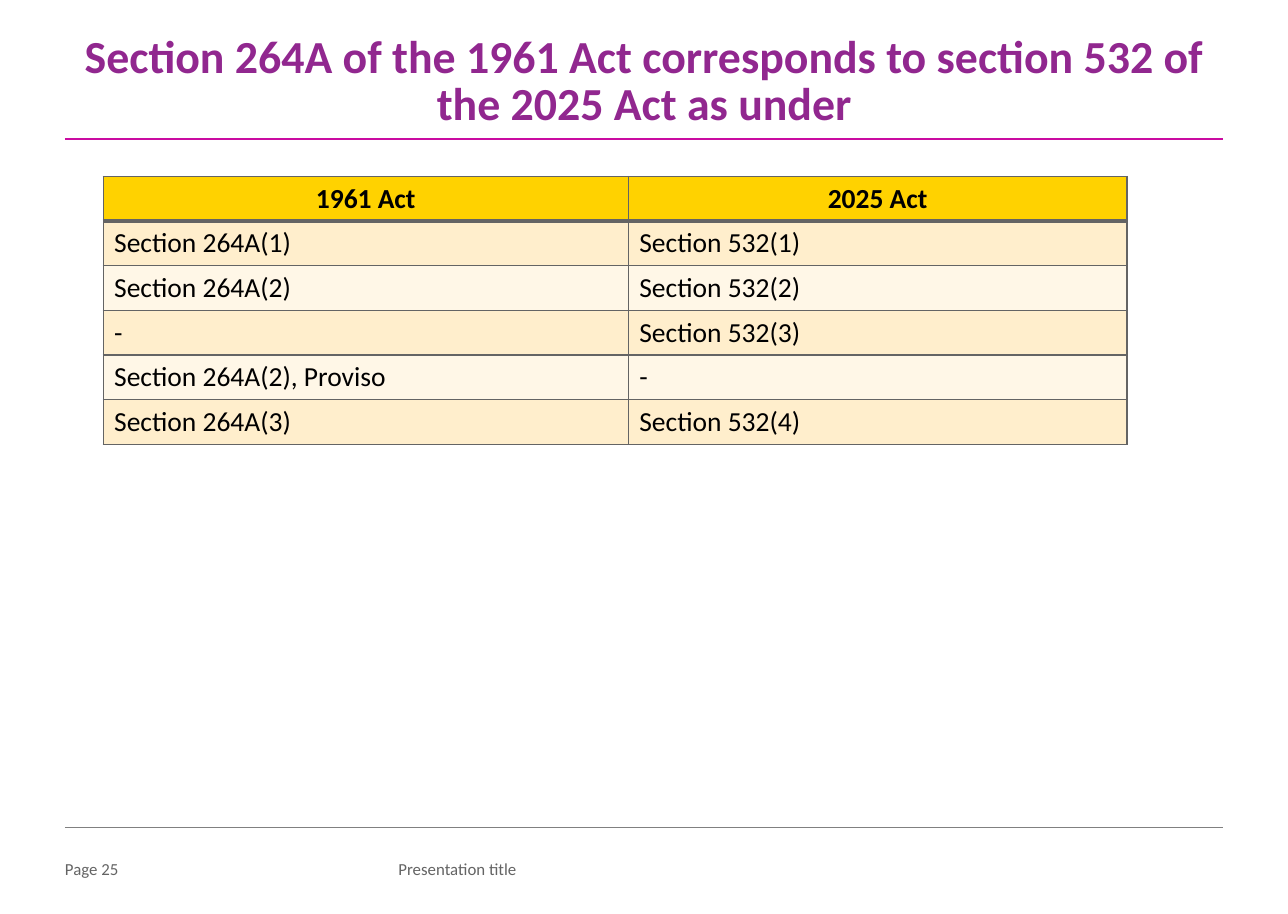
"""Build the slide that maps section 264A of the 1961 Act to section 532 of the 2025 Act."""
from lxml.etree import SubElement
from pptx import Presentation
from pptx.dml.color import RGBColor
from pptx.enum.shapes import MSO_CONNECTOR as Link
from pptx.enum.text import MSO_ANCHOR as Anchor, MSO_AUTO_SIZE as Fit, PP_ALIGN as Align
from pptx.oxml.ns import qn
from pptx.util import Pt

PURPLE = RGBColor(0x91, 0x27, 0x8F)
PINK = RGBColor(0xCA, 0x0C, 0xA1)
SILVER = RGBColor(0x80, 0x80, 0x80)
GRAY = RGBColor(0x64, 0x64, 0x64)
BLACK = RGBColor(0, 0, 0)
GOLD = RGBColor(0xFF, 0xD2, 0x00)
SAND = RGBColor(0xFF, 0xEE, 0xCC)
CREAM = RGBColor(0xFF, 0xF7, 0xE7)


def style(para, size, color, bold=False):
    for run in para.runs:
        font = run.font
        font.name, font.size, font.bold = "Calibri", Pt(size), bold
        font.color.rgb = color


def strip(frame):
    frame.margin_left = frame.margin_right = Pt(0)
    frame.margin_top = frame.margin_bottom = Pt(0)
    frame.auto_size = Fit.NONE
    frame.word_wrap = True
    frame.vertical_anchor = Anchor.TOP


deck = Presentation()
deck.slide_width, deck.slide_height = Pt(842.4), Pt(597.6)
slide = deck.slides.add_slide(deck.slide_layouts[5])
shapes = slide.shapes

for y, color, width in [(90.7, PINK, 1.5), (540.7, SILVER, 0.25)]:
    rule = shapes.add_connector(Link.STRAIGHT, Pt(42.5), Pt(y), Pt(800), Pt(y))
    rule.line.color.rgb, rule.line.width = color, Pt(width)
    SubElement(rule._element.spPr, qn("a:effectLst"))

title = shapes.title
title.left, title.top, title.width, title.height = Pt(42.5), Pt(23.8), Pt(758), Pt(60.5)
frame = title.text_frame
frame.text = "Section 264A of the 1961 Act corresponds to section 532 of the 2025 Act as under"
strip(frame)
para = frame.paragraphs[0]
para.alignment, para.line_spacing = Align.CENTER, 0.85
style(para, 30, PURPLE, True)

rows = [
    ("1961 Act", "2025 Act"),
    ("Section 264A(1)", "Section 532(1)"),
    ("Section 264A(2)", "Section 532(2)"),
    ("-", "Section 532(3)"),
    ("Section 264A(2), Proviso", "-"),
    ("Section 264A(3)", "Section 532(4)"),
]
high = 29.1
table = shapes.add_table(len(rows), 2, Pt(67.5), Pt(115.4), Pt(669.6), Pt(high * len(rows))).table
for col, width in zip(table.columns, (343.5, 326.1)):
    col.width = Pt(width)
for r, texts in enumerate(rows):
    table.rows[r].height = Pt(high)
    for c, text in enumerate(texts):
        cell = table.cell(r, c)
        cell.text = text
        para = cell.text_frame.paragraphs[0]
        para.alignment = Align.LEFT if r else Align.CENTER
        style(para, 18, BLACK, r == 0)
        props = cell._tc.get_or_add_tcPr()
        thick = {0: "lnB", 1: "lnT"}.get(r)
        for side in ("lnL", "lnR", "lnT", "lnB"):
            edge = SubElement(props, qn("a:" + side), w=str(Pt(3 if side == thick else 1)))
            fill = SubElement(edge, qn("a:solidFill"))
            SubElement(fill, qn("a:srgbClr"), val=str(GRAY))
        cell.fill.solid()
        cell.fill.fore_color.rgb = GOLD if r == 0 else SAND if r % 2 else CREAM

for text, x, width in [("Page 25", 42.5, 57), ("Presentation title", 260.6, 270.7)]:
    frame = shapes.add_textbox(Pt(x), Pt(561.6), Pt(width), Pt(15.8)).text_frame
    frame.text = text
    strip(frame)
    style(frame.paragraphs[0], 11, GRAY)

deck.save("out.pptx")
